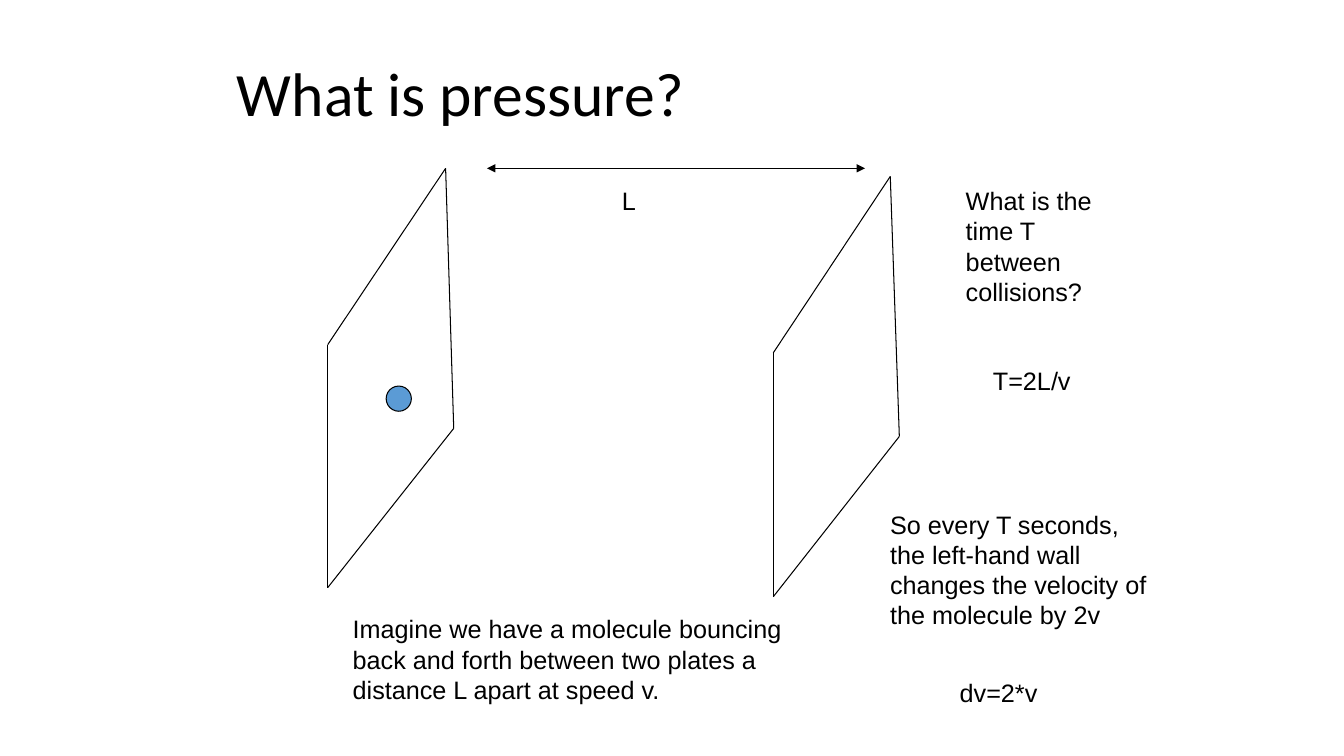
from dataclasses import dataclass

from lxml import etree
from pptx import Presentation
from pptx.dml.color import RGBColor
from pptx.enum import shapes, text
from pptx.oxml import ns
from pptx.util import Inches, Pt


@dataclass(frozen=True)
class Theme:
    ink: RGBColor = RGBColor(0, 0, 0)
    ball: RGBColor = RGBColor(0x5B, 0x9B, 0xD5)
    head: str = "Calibri"
    body: str = "Arial"
    big: int = 44
    small: int = 18
    line: float = 0.75


theme = Theme()
TITLE = "What is pressure?"
# Corners of each plate in drawing order
PLATES = [
    [(3.25, 5.83), (3.25, 3.42), (4.42, 1.67), (4.5, 4.25)],
    [(7.67, 5.92), (7.67, 3.5), (8.83, 1.75), (8.92, 4.33)],
]
BALL = (3.83, 3.83, 0.25, 0.25)
SPAN = ((4.83, 1.67), (8.58, 1.67))
# Box, wrap, paragraphs
NOTES = [
    ((3.4, 6.04, 5.1, 1), True,
     ["Imagine we have a molecule bouncing",
      "back and forth between two plates a distance L apart at speed v."]),
    ((9.48, 1.79, 1.68, 1.3), True, ["What is the time T between collisions?"]),
    ((9.75, 3.58, 0.97, 0.4), False, ["T=2L/v"]),
    ((8.73, 5, 2.93, 1.3), True,
     ["So every T seconds,",
      "the left-hand wall changes the velocity of the molecule by 2v"]),
    ((9.42, 6.67, 0.97, 0.4), False, ["dv=2*v"]),
    ((6.07, 1.79, 0.34, 0.4), False, ["L"]),
]


def style(par, face, size):
    par.font.name = face
    par.font.size = Pt(size)
    par.font.color.rgb = theme.ink


def ink(line):
    line.color.rgb = theme.ink
    line.width = Pt(theme.line)


def add_line(slide, start, end):
    line = slide.shapes.add_connector(
        shapes.MSO_CONNECTOR.STRAIGHT, *map(Inches, start + end))
    ink(line.line)
    etree.SubElement(line._element.spPr, ns.qn("a:effectLst"))
    return line


def add_heads(line):
    ln = line.line._get_or_add_ln()
    for tag in ("a:headEnd", "a:tailEnd"):
        etree.SubElement(ln, ns.qn(tag), type="triangle")


def add_title(slide):
    title = slide.shapes.title
    title.left, title.top, title.width, title.height = map(
        Inches, (2.25, 0.33, 9, 1.25))
    frame = title.text_frame
    frame.text = TITLE
    frame.vertical_anchor = text.MSO_ANCHOR.MIDDLE
    par = frame.paragraphs[0]
    par.alignment = text.PP_ALIGN.LEFT
    par.line_spacing = 0.9
    style(par, theme.head, theme.big)


def add_ball(slide):
    ball = slide.shapes.add_shape(shapes.MSO_SHAPE.OVAL, *map(Inches, BALL))
    ball.shadow.inherit = False
    ball.fill.solid()
    ball.fill.fore_color.rgb = theme.ball
    ink(ball.line)


def add_note(slide, box, wrap, lines):
    frame = slide.shapes.add_textbox(*map(Inches, box)).text_frame
    frame.word_wrap = wrap
    frame.auto_size = text.MSO_AUTO_SIZE.SHAPE_TO_FIT_TEXT
    frame.text = "\n".join(lines)
    for par in frame.paragraphs:
        style(par, theme.body, theme.small)


def main():
    deck = Presentation()
    deck.slide_width, deck.slide_height = Inches(13.33), Inches(7.5)
    slide = deck.slides.add_slide(deck.slide_layouts[5])
    add_title(slide)
    for plate in PLATES:
        for start, end in zip(plate, plate[1:] + plate[:1]):
            add_line(slide, start, end)
    add_ball(slide)
    add_heads(add_line(slide, *SPAN))
    for note in NOTES:
        add_note(slide, *note)
    deck.save("out.pptx")


if __name__ == "__main__":
    main()
